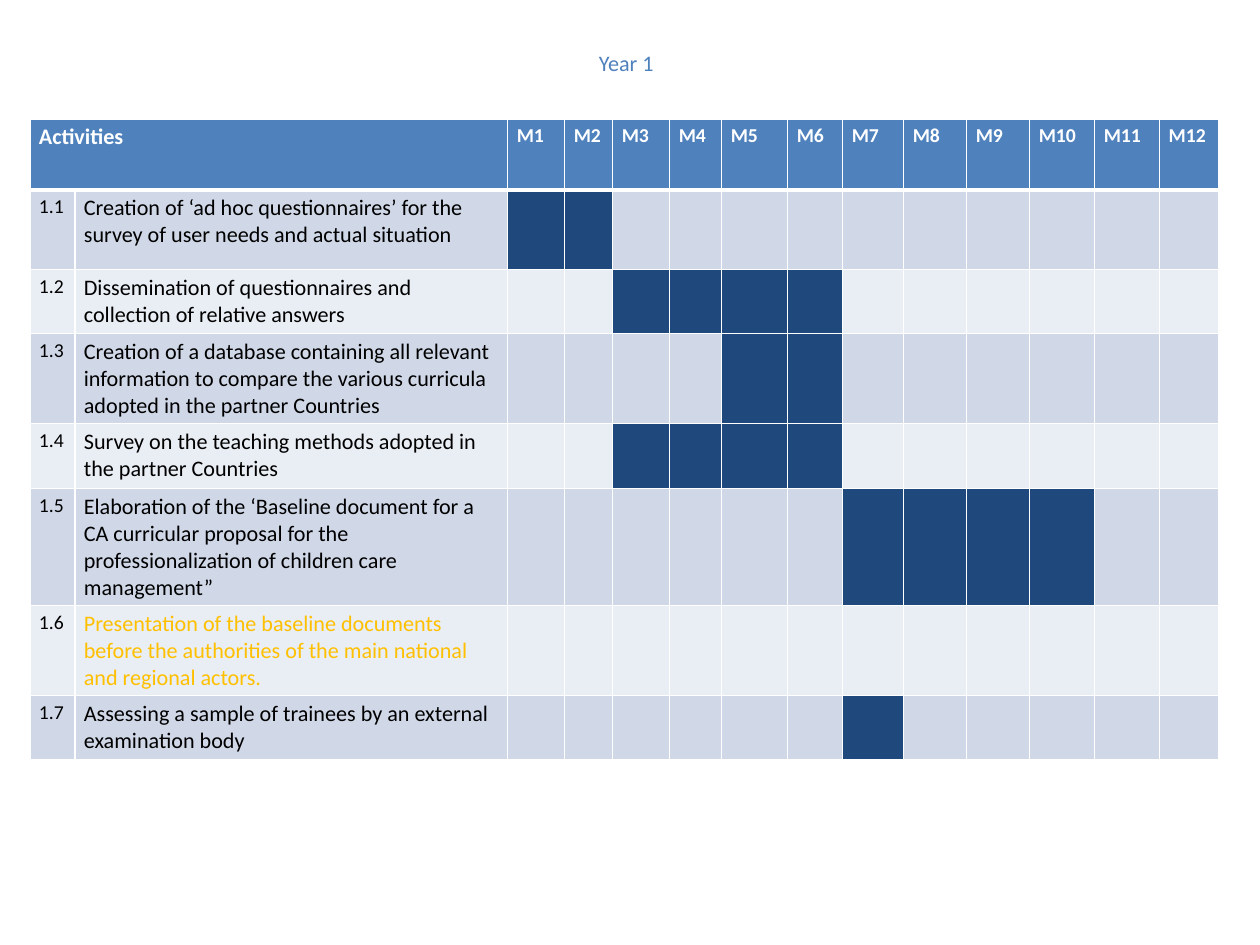
import pptx
import pptx.util
import pptx.dml.color
import pptx.enum.text
import pptx.oxml.ns
from lxml import etree

PX = 10320  # EMU in one px

HEADER, BAR, DARK_BAND, LIGHT_BAND = "4F81BD", "1F497D", "D0D8E8", "E9EDF4"
WHITE, BLACK, GOLD = "FFFFFF", "000000", "FFC000"

COLUMN_WIDTHS = [45, 433, 57, 48, 57, 52, 66, 55, 61, 63, 63, 65, 65, 59]
ROW_HEIGHTS = [71, 80, 64, 90, 65, 117, 90, 64]

# Activity, text colour, months in which it runs
ACTIVITIES = [
    ("Creation of ‘ad hoc questionnaires’ for the survey of user needs and actual situation",
     BLACK, range(1, 3)),
    ("Dissemination of questionnaires and collection of relative answers", BLACK, range(3, 7)),
    ("Creation of a database containing all relevant information to compare the various "
     "curricula adopted in the partner Countries", BLACK, range(5, 7)),
    ("Survey on the teaching methods adopted in the partner Countries", BLACK, range(3, 7)),
    ("Elaboration of the ‘Baseline document for a CA curricular proposal for the "
     "professionalization of children care management”", BLACK, range(7, 11)),
    ("Presentation of the baseline documents before the authorities of the main national "
     "and regional actors.", GOLD, range(0)),
    ("Assessing a sample of trainees by an external examination body", BLACK, range(7, 8)),
]


def write(frame, text, size=18, color=BLACK, bold=False):
    para = frame.paragraphs[0]
    para.alignment = pptx.enum.text.PP_ALIGN.LEFT
    span = para.add_run()
    span.text = text
    span.font.name = "Calibri"
    span.font.size = pptx.util.Pt(size)
    span.font.bold = bold
    span.font.color.rgb = pptx.dml.color.RGBColor.from_string(color)


def paint(cell, color, top=1, bottom=1):
    """Fill a cell and give it white borders, with widths in points."""
    qn = pptx.oxml.ns.qn
    properties = cell._tc.get_or_add_tcPr()
    for side, width in (("lnL", 1), ("lnR", 1), ("lnT", top), ("lnB", bottom)):
        line = etree.SubElement(properties, qn("a:" + side), w=str(pptx.util.Pt(width)))
        solid = etree.SubElement(line, qn("a:solidFill"))
        etree.SubElement(solid, qn("a:srgbClr"), val=WHITE)
    cell.fill.solid()
    cell.fill.fore_color.rgb = pptx.dml.color.RGBColor.from_string(color)


deck = pptx.Presentation()
deck.slide_width, deck.slide_height = 1260 * PX, 945 * PX
page = deck.slides.add_slide(deck.slide_layouts[5])

title = page.shapes.title
title.left, title.top, title.width, title.height = 590 * PX, 45 * PX, 647 * PX, 36 * PX
title.text_frame.vertical_anchor = pptx.enum.text.MSO_ANCHOR.TOP
title.text_frame.auto_size = pptx.enum.text.MSO_AUTO_SIZE.SHAPE_TO_FIT_TEXT
write(title.text_frame, "Year 1", color=HEADER)

plan = page.shapes.add_table(
    len(ROW_HEIGHTS), len(COLUMN_WIDTHS), 30 * PX, 119 * PX,
    sum(COLUMN_WIDTHS) * PX, sum(ROW_HEIGHTS) * PX).table
for column, width in zip(plan.columns, COLUMN_WIDTHS):
    column.width = width * PX
for row, height in zip(plan.rows, ROW_HEIGHTS):
    row.height = height * PX

plan.cell(0, 0).merge(plan.cell(0, 1))
write(plan.cell(0, 0).text_frame, "Activities", color=WHITE, bold=True)
for index in range(len(COLUMN_WIDTHS)):
    paint(plan.cell(0, index), HEADER, bottom=3)
for month in range(1, 13):
    write(plan.cell(0, month + 1).text_frame, f"M{month}", size=16, color=WHITE, bold=True)

for number, (activity, color, months) in enumerate(ACTIVITIES, start=1):
    band = DARK_BAND if number % 2 else LIGHT_BAND
    for index in range(len(COLUMN_WIDTHS)):
        paint(plan.cell(number, index), BAR if index - 1 in months else band,
              top=3 if number == 1 else 1)
    write(plan.cell(number, 0).text_frame, f"1.{number}", size=16)
    write(plan.cell(number, 1).text_frame, activity, color=color)

deck.save("out.pptx")
